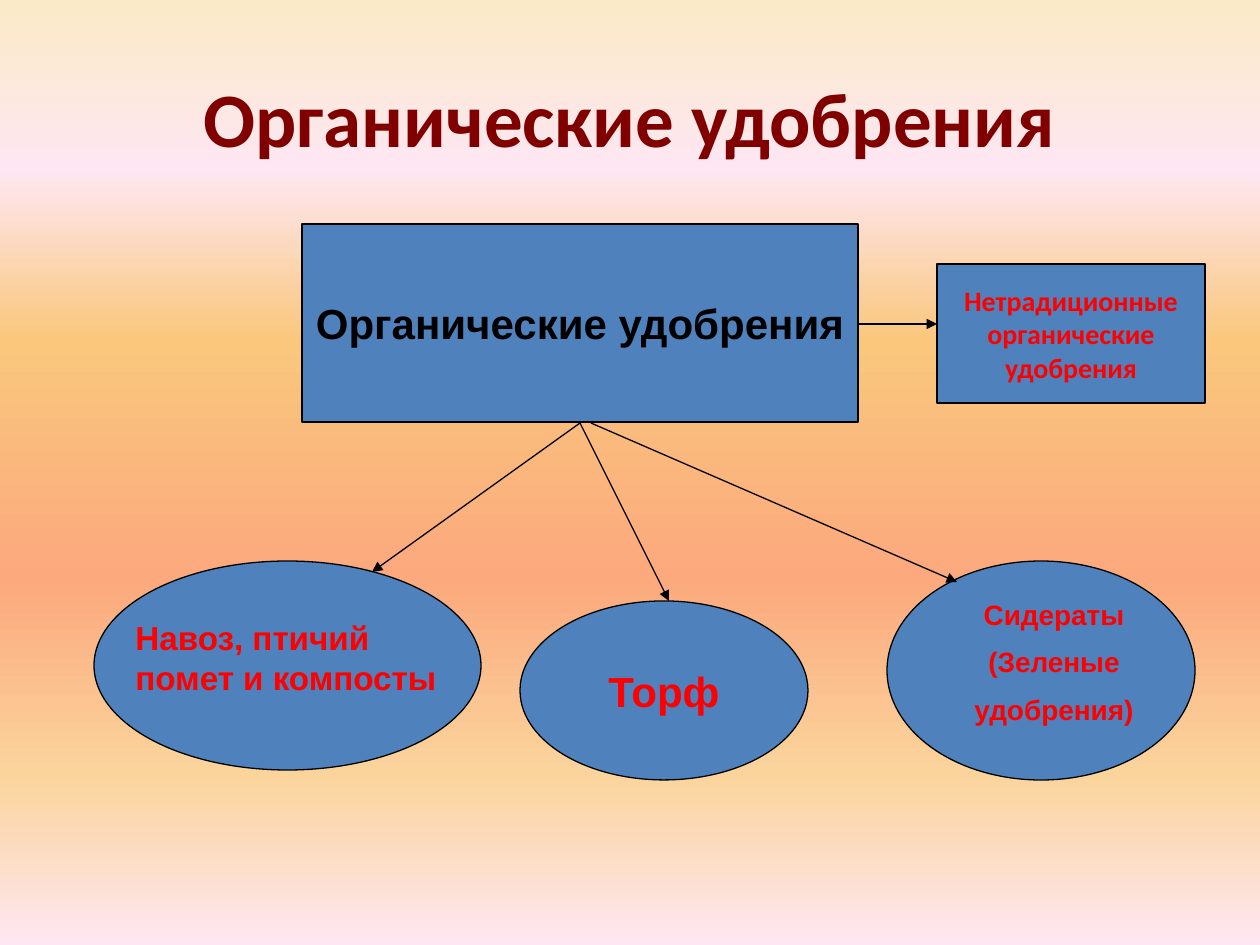
from lxml.etree import SubElement
from pptx import Presentation
from pptx.dml.color import RGBColor
from pptx.enum.shapes import MSO_CONNECTOR, MSO_SHAPE
from pptx.enum.text import MSO_ANCHOR, PP_ALIGN
from pptx.oxml.ns import qn
from pptx.util import Emu, Pt

MAROON = RGBColor(0x80, 0x00, 0x00)
RED = RGBColor(0xFF, 0x00, 0x00)
BLACK = RGBColor(0x00, 0x00, 0x00)
BLUE = RGBColor(0x4F, 0x81, 0xBD)
SKY = [(0, RGBColor(0xFB, 0xEA, 0xC7)), (18, RGBColor(0xFE, 0xE7, 0xF2)),
       (36, RGBColor(0xFA, 0xC7, 0x7D)), (61, RGBColor(0xFB, 0xA9, 0x7D)),
       (82, RGBColor(0xFB, 0xD4, 0x9C)), (100, RGBColor(0xFE, 0xE7, 0xF2))]
RECT, OVAL = MSO_SHAPE.RECTANGLE, MSO_SHAPE.OVAL


def px(*values):
    return [Emu(round(v * 914400 / 126)) for v in values]


def paint_background(s):
    fill = s.background.fill
    fill.gradient()
    grad = s.background._cSld.find(".//" + qn("a:gradFill"))
    stops = grad.find(qn("a:gsLst"))
    for old in list(stops):
        stops.remove(old)
    for pos, color in SKY:
        stop = SubElement(stops, qn("a:gs"), pos=str(pos * 1000))
        SubElement(stop, qn("a:srgbClr"), val=str(color))
    lin = grad.find(qn("a:lin"))
    lin.set("ang", "5400000")
    lin.set("scaled", "0")


def write(tf, lines, size, color, font="Arial", align=PP_ALIGN.CENTER,
          anchor=MSO_ANCHOR.MIDDLE, wrap=True, before=0):
    tf.word_wrap, tf.vertical_anchor = wrap, anchor
    for i, line in enumerate(lines):
        p = tf.add_paragraph() if i else tf.paragraphs[0]
        p.alignment = align
        if before:
            # spacing as a share of the line height
            space = SubElement(p._p.get_or_add_pPr(), qn("a:spcBef"))
            SubElement(space, qn("a:spcPct"), val=str(before * 1000))
        r = p.add_run()
        r.text = line
        r.font.color.rgb = color
        for name, value in {"size": Pt(size), "name": font, "bold": True}.items():
            setattr(r.font, name, value)


def add_label(s, box, lines, size, color, **fmt):
    write(s.shapes.add_textbox(*px(*box)).text_frame, lines, size, color, **fmt)


def add_node(s, kind, box, lines=(), size=24, color=RED, **fmt):
    sp = s.shapes.add_shape(kind, *px(*box))
    sp.shadow.inherit = False
    sp.fill.solid()
    sp.fill.fore_color.rgb = BLUE
    sp.line.color.rgb = BLACK
    sp.line.width = Pt(0.75)
    write(sp.text_frame, lines, size, color, wrap=False, **fmt)


def add_arrow(s, start, end):
    line = s.shapes.add_connector(MSO_CONNECTOR.STRAIGHT, *px(*start, *end))
    line.line.color.rgb = BLACK
    line.line.width = Pt(0.75)
    SubElement(line.line._get_or_add_ln(), qn("a:tailEnd"), type="triangle")
    SubElement(line._element.spPr, qn("a:effectLst"))


def add_fertilizer_tree(s, x, y):
    # root and side branch
    add_node(s, RECT, (x + 208, y, 556, 198), ["Органические удобрения"], color=BLACK)
    add_node(s, RECT, (x + 843, y + 40, 268, 139),
             ["Нетрадиционные", "органические", "удобрения"], 16, font="Calibri")

    # three kinds; the outer two carry their text in separate boxes
    add_node(s, OVAL, (x, y + 337, 387, 209))
    add_node(s, OVAL, (x + 426, y + 377, 288, 179), ["Торф"])
    add_node(s, OVAL, (x + 793, y + 337, 308, 219))
    spaced = {"anchor": MSO_ANCHOR.TOP, "before": 50}
    add_label(s, (x + 29, y + 387, 348, 92), ["Навоз, птичий помет и компосты"],
              19, RED, align=PP_ALIGN.LEFT, **spaced)
    add_label(s, (x + 754, y + 367, 412, 147),
              ["Сидераты", "(Зеленые", "удобрения)"], 16, RED, **spaced)

    # arrows from the root
    add_arrow(s, (x + 764, y + 100), (x + 843, y + 100))
    for start, end in ((486, (278, 348)), (486, (575, 377)), (497, (863, 358))):
        add_arrow(s, (x + start, y + 199), (x + end[0], y + end[1]))


def main():
    prs = Presentation()
    prs.slide_width, prs.slide_height = px(1260, 945)
    s = prs.slides.add_slide(prs.slide_layouts[6])
    paint_background(s)
    add_label(s, (63, 38, 1134, 157), ["Органические удобрения"], 44, MAROON,
              font="Calibri")
    add_fertilizer_tree(s, 94, 224)
    prs.save("out.pptx")


if __name__ == "__main__":
    main()
